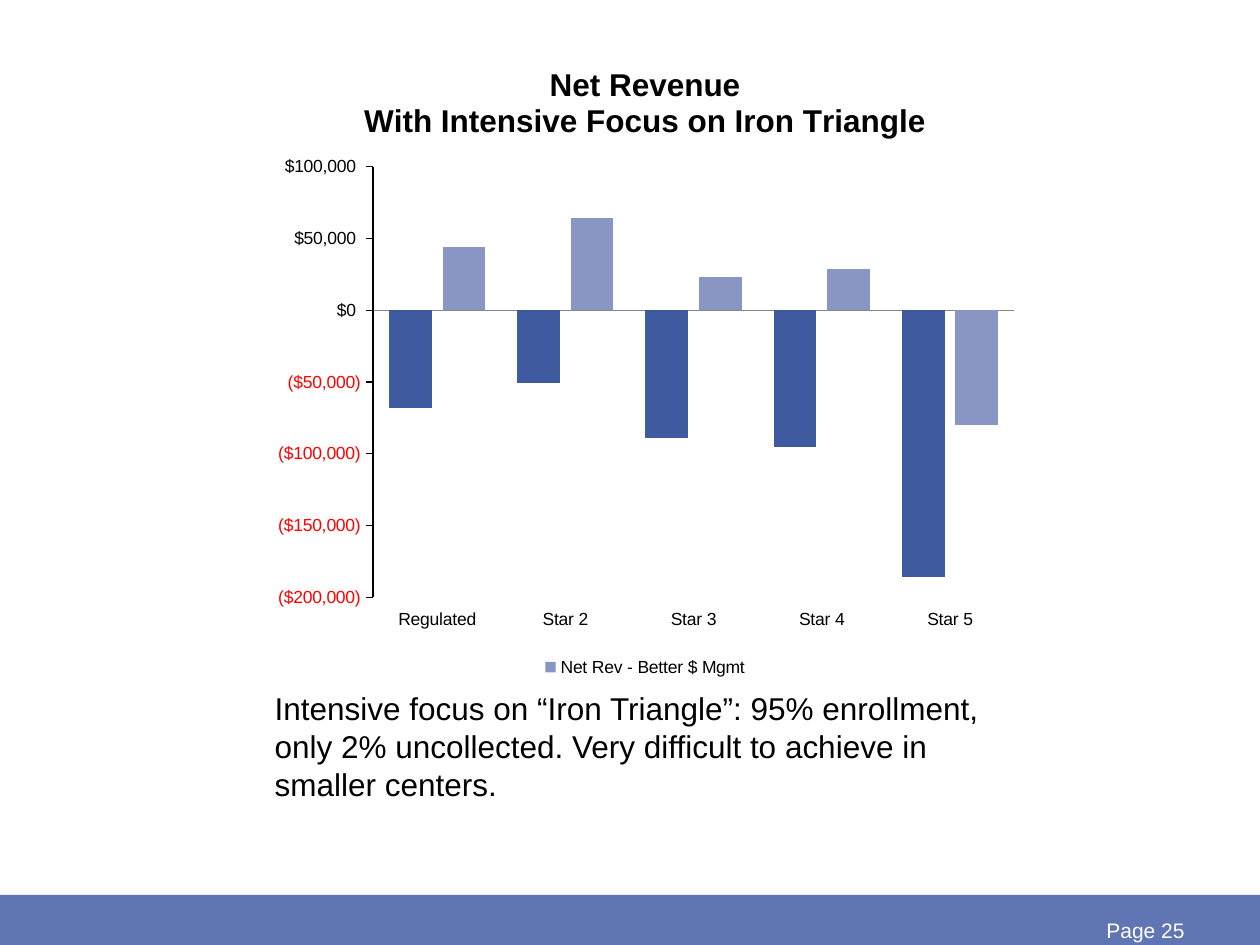
from dataclasses import dataclass

from lxml import etree
from pptx import Presentation
from pptx.chart.data import CategoryChartData
from pptx.dml.color import RGBColor
from pptx.enum.chart import (XL_CHART_TYPE, XL_LEGEND_POSITION, XL_TICK_LABEL_POSITION,
                             XL_TICK_MARK)
from pptx.enum.shapes import MSO_SHAPE
from pptx.enum.text import MSO_ANCHOR, PP_ALIGN
from pptx.oxml import parse_xml
from pptx.oxml.ns import nsdecls, qn
from pptx.util import Pt

COLUMN = XL_CHART_TYPE.COLUMN_CLUSTERED
BOTTOM = XL_LEGEND_POSITION.BOTTOM
LOW = XL_TICK_LABEL_POSITION.LOW
NONE, OUTSIDE = XL_TICK_MARK.NONE, XL_TICK_MARK.OUTSIDE
RECT = MSO_SHAPE.RECTANGLE
MIDDLE = MSO_ANCHOR.MIDDLE
LEFT, RIGHT = PP_ALIGN.LEFT, PP_ALIGN.RIGHT
SCALE = 914400 / 126
MONEY = '"$"#,##0_);[Red]\\("$"#,##0\\)'


@dataclass
class Box:
    left: int
    top: int
    width: int
    height: int

    def emu(self) -> list[int]:
        return [round(n * SCALE) for n in (self.left, self.top, self.width, self.height)]


@dataclass
class Series:
    name: str
    color: str
    values: tuple[int, ...]


STARS = ("Regulated", "Star 2", "Star 3", "Star 4", "Star 5")
SERIES = (
    Series("Series 1", "405A9F", (-68000, -51000, -89000, -95000, -186000)),
    Series("Net Rev - Better $ Mgmt", "8995C3", (44000, 64000, 23000, 29000, -80000)),
)
TITLE = ("Net Revenue", "With Intensive Focus on Iron Triangle")
NOTE = ("Intensive focus on “Iron Triangle”: 95% enrollment, only 2% uncollected. "
        "Very difficult to achieve in smaller centers.")
CHART = Box(262, 42, 766, 640)
PLOT = Box(373, 167, 641, 431)


def rgb(code: str) -> RGBColor:
    return RGBColor.from_string(code)


def apply(item, values: dict) -> None:
    for key, value in values.items():
        setattr(item, key, value)


def style(font, size: int, color: str, bold: bool = False) -> None:
    apply(font, {"name": "Arial", "size": Pt(size), "bold": bold})
    font.color.rgb = rgb(color)


def place(shape, box: Box) -> None:
    apply(shape, dict(zip(("left", "top", "width", "height"), box.emu())))


def add_band(slide, box: Box) -> None:
    band = slide.shapes.add_shape(RECT, *box.emu())
    band.shadow.inherit = False
    band.fill.solid()
    band.fill.fore_color.rgb = rgb("6076B4")
    band.line.fill.background()


def add_page(slide, box: Box) -> None:
    frame = slide.shapes.add_textbox(*box.emu()).text_frame
    apply(frame, {"word_wrap": True, "vertical_anchor": MIDDLE})
    para = frame.paragraphs[0]
    apply(para, {"text": "Page 25", "alignment": RIGHT})
    style(para.font, 12, "FFFFFF")


def add_note(slide, box: Box) -> None:
    body = slide.placeholders[1]
    place(body, box)
    para = body.text_frame.paragraphs[0]
    para.text = NOTE
    props = para._p.get_or_add_pPr()
    apply_xml = {"marL": "0", "indent": "0"}
    for key, value in apply_xml.items():
        props.set(key, value)
    etree.SubElement(props, qn("a:buNone"))
    apply(para, {"alignment": LEFT, "space_before": Pt(0)})
    style(para.font, 18, "000000")


def set_plot(chart) -> None:
    area = chart._chartSpace.chart.plotArea
    for old in area.findall(qn("c:layout")):
        area.remove(old)
    spots = {
        "x": (PLOT.left - CHART.left) / CHART.width,
        "y": (PLOT.top - CHART.top) / CHART.height,
        "w": PLOT.width / CHART.width,
        "h": PLOT.height / CHART.height,
    }
    modes = '<c:layoutTarget val="inner"/><c:xMode val="edge"/><c:yMode val="edge"/>'
    sizes = "".join(f'<c:{key} val="{value:.3f}"/>' for key, value in spots.items())
    area.insert(0, parse_xml(f'<c:layout {nsdecls("c")}><c:manualLayout>{modes}{sizes}'
                             "</c:manualLayout></c:layout>"))


def set_title(chart) -> None:
    chart.has_title = True
    frame = chart.chart_title.text_frame
    frame.text = "\n".join(TITLE)
    for para in frame.paragraphs:
        style(para.font, 18, "000000", True)


def set_key(chart) -> None:
    chart.has_legend = True
    apply(chart.legend, {"position": BOTTOM, "include_in_layout": False})
    entry = parse_xml(f'<c:legendEntry {nsdecls("c")}><c:idx val="0"/>'
                      '<c:delete val="1"/></c:legendEntry>')
    chart.legend._element.find(qn("c:legendPos")).addnext(entry)


def set_axes(chart) -> None:
    base, money = chart.category_axis, chart.value_axis
    apply(base, {"major_tick_mark": NONE, "minor_tick_mark": NONE,
                 "tick_label_position": LOW, "has_major_gridlines": False})
    apply(money, {"minimum_scale": -200000, "maximum_scale": 100000, "major_unit": 50000,
                  "major_tick_mark": OUTSIDE, "minor_tick_mark": NONE,
                  "has_major_gridlines": False})
    apply(money.tick_labels, {"number_format": MONEY, "number_format_is_linked": False})
    for axis, color in ((base, "868686"), (money, "000000")):
        axis.format.line.color.rgb = rgb(color)
        axis.format.line.width = Pt(0.75)


def add_chart(slide, box: Box) -> None:
    data = CategoryChartData()
    data.categories = STARS
    for row in SERIES:
        data.add_series(row.name, row.values)
    chart = slide.shapes.add_chart(COLUMN, *box.emu(), data).chart
    style(chart.font, 10, "000000")
    set_title(chart)
    set_key(chart)
    set_axes(chart)
    set_plot(chart)
    plot = chart.plots[0]
    apply(plot, {"gap_width": 75, "overlap": -25, "vary_by_categories": False})
    for bars, row in zip(plot.series, SERIES):
        bars.invert_if_negative = False
        bars.format.fill.solid()
        bars.format.fill.fore_color.rgb = rgb(row.color)


def main() -> None:
    deck = Presentation()
    page = Box(0, 0, 1260, 945).emu()
    apply(deck, {"slide_width": page[2], "slide_height": page[3]})
    slide = deck.slides.add_slide(deck.slide_layouts[1])
    title = slide.shapes.title._element
    title.getparent().remove(title)
    add_band(slide, Box(0, 895, 1260, 50))
    add_page(slide, Box(903, 905, 294, 50))
    add_note(slide, Box(262, 683, 766, 168))
    add_chart(slide, CHART)
    deck.save("out.pptx")


if __name__ == "__main__":
    main()
